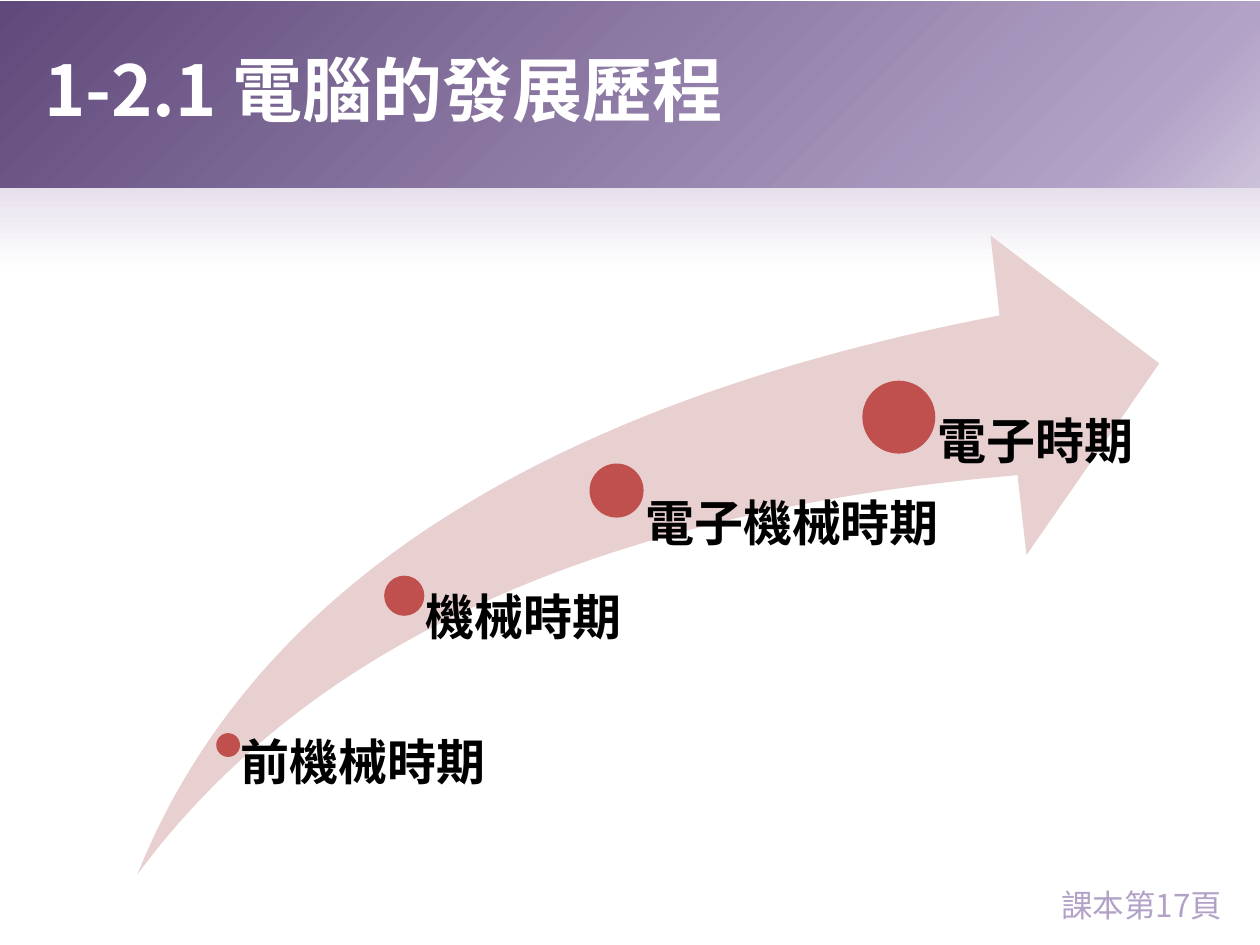
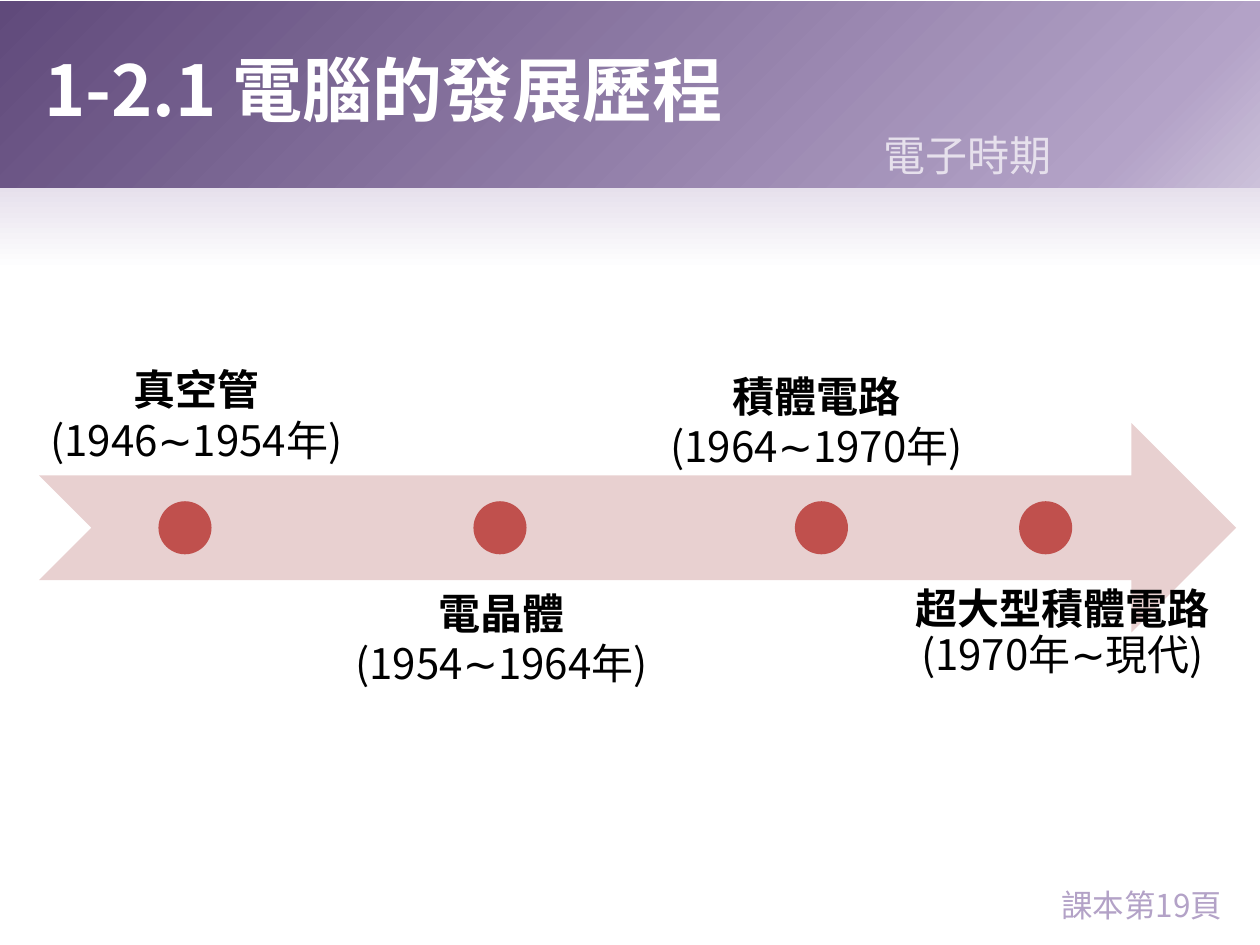
from lxml import etree
from pptx import Presentation
from pptx.dml.color import RGBColor
from pptx.enum import shapes, text
from pptx.oxml import ns
from pptx.util import Cm, Pt

HUES = {
    "white": "FFFFFF", "black": "000000", "deep": "604A7B", "lilac": "B3A2C7",
    "pale": "CCC1DA", "mist": "E6E0EC", "rose": "E8D0D0", "red": "C0504D",
}
SANS = "Noto Sans CJK SC"
LABEL = "Noto Sans CJK TC"
KIND = shapes.MSO_SHAPE
ALIGN = text.PP_ALIGN
TITLE = "1-2.1 電腦的發展歷程"


def style(run, face, size, hue, bold=False):
    font = run.font
    font.name, font.size, font.bold = face, Pt(size), bold
    font.color.rgb = RGBColor.from_string(HUES[hue])
    east = etree.SubElement(font._element, ns.qn("a:ea"))
    east.set("typeface", face)


def draw(slide, kind, box, hue=None):
    shape = slide.shapes.add_shape(kind, *map(Cm, box))
    shape.shadow.inherit = False
    shape.line.fill.background()
    if hue:
        shape.fill.solid()
        shape.fill.fore_color.rgb = RGBColor.from_string(HUES[hue])
    return shape


def dot(slide, x, y, size):
    """Draw a red dot centred on x, y."""
    draw(slide, KIND.OVAL, (x - size / 2, y - size / 2, size, size), "red")


def blend(shape, stops, angle):
    """Fill a shape with a linear gradient of (percent, hue) stops."""
    shape.fill.gradient()
    grad = shape._element.spPr.find(ns.qn("a:gradFill"))
    for child in list(grad):
        grad.remove(child)
    items = etree.SubElement(grad, ns.qn("a:gsLst"))
    for place, hue in stops:
        stop = etree.SubElement(items, ns.qn("a:gs"), pos=str(place * 1000))
        etree.SubElement(stop, ns.qn("a:srgbClr"), val=HUES[hue])
    etree.SubElement(grad, ns.qn("a:lin"), ang=str(angle * 60000), scaled="0")


def write(slide, box, words, align=ALIGN.LEFT, inset=None, wrap=True, ratio=None):
    """Add a text box and return its runs."""
    frame = slide.shapes.add_textbox(*map(Cm, box)).text_frame
    frame.word_wrap = wrap
    if inset is not None:
        frame.margin_left = Cm(inset)
        frame.margin_top = frame.margin_right = frame.margin_bottom = 0
    frame.text = words
    para = frame.paragraphs[0]
    para.alignment = align
    if ratio:
        para.line_spacing = ratio
    return para.runs


def band(slide, layout):
    """Put the title band and the fade below it on the layout."""
    fade = draw(slide, KIND.RECTANGLE, (0, 3.76, 25.4, 15.29))
    blend(fade, [(0, "mist"), (11, "white"), (100, "white")], 90)
    head = draw(slide, KIND.RECTANGLE, (0, 0.03, 25.4, 3.76))
    blend(head, [(0, "deep"), (88, "lilac"), (100, "pale")], 45)
    for spot, shape in enumerate((fade, head), 2):
        layout.shapes._spTree.insert(spot, shape._element)


def start(deck, layout, page):
    """Add a slide with its title and textbook page."""
    slide = deck.slides.add_slide(layout)
    title = slide.shapes.title
    title.left, title.top, title.width, title.height = map(Cm, (0.64, 0.2, 20.12, 3.18))
    frame = title.text_frame
    frame.text = TITLE
    frame.vertical_anchor = text.MSO_ANCHOR.MIDDLE
    frame.paragraphs[0].alignment = ALIGN.LEFT
    style(frame.paragraphs[0].runs[0], SANS, 40, "white", True)
    note = write(slide, (20.9, 17.73, 4.24, 1.02), f"課本第{page}頁", ALIGN.CENTER)
    style(note[0], SANS, 18, "lilac")
    return slide


def eras(slide):
    swoosh = draw(slide, KIND.SWOOSH_ARROW, (2.77, 4.75, 20.6, 12.88), "rose")
    swoosh.adjustments[0] = swoosh.adjustments[1] = 0.25
    steps = [
        ("前機械時期", 4.6, 15.02, 0.48, 14.88),
        ("機械時期", 8.15, 12.01, 0.81, 11.96),
        ("電子機械時期", 12.43, 9.89, 1.09, 10.06),
        ("電子時期", 18.12, 8.41, 1.47, 8.41),
    ]
    for name, x, y, size, top in steps:
        dot(slide, x, y, size)
        runs = write(slide, (x, top, 7, 1.52), name, inset=0.53 * size, ratio=0.9)
        style(runs[0], LABEL, 28, "black", True)


def parts(slide):
    draw(slide, KIND.NOTCHED_RIGHT_ARROW, (0.79, 8.53, 24.13, 4.22), "rose")
    steps = [
        ("真空管", "1946∼1954年", 3.73, 3.96, 7.21, None),
        ("電晶體", "1954∼1964年", 10.08, 10.11, 11.71, None),
        ("積體電路", "1964∼1970年", 16.56, 16.46, 7.34, None),
        ("超大型積體電路", "1970年∼現代", 21.08, 21.42, 11.74, 0.9),
    ]
    wide = 7.14
    for name, years, x, mid, top, ratio in steps:
        dot(slide, x, 10.64, 1.07)
        runs = write(slide, (mid - wide / 2, top, wide, 2.31),
                     f"{name}\v({years})", ALIGN.CENTER, ratio=ratio)
        style(runs[0], LABEL, 24, "black", True)
        style(runs[1], LABEL, 24, "black")
    topic = write(slide, (17.5, 2.49, 3.94, 1.27), "電子時期", ALIGN.RIGHT, wrap=False)
    style(topic[0], SANS, 24, "mist")


def main():
    deck = Presentation()
    deck.slide_width, deck.slide_height = Cm(25.4), Cm(19.05)
    layout = deck.slide_layouts[5]
    first = start(deck, layout, 17)
    band(first, layout)
    eras(first)
    parts(start(deck, layout, 19))
    deck.save("out.pptx")


if __name__ == "__main__":
    main()
